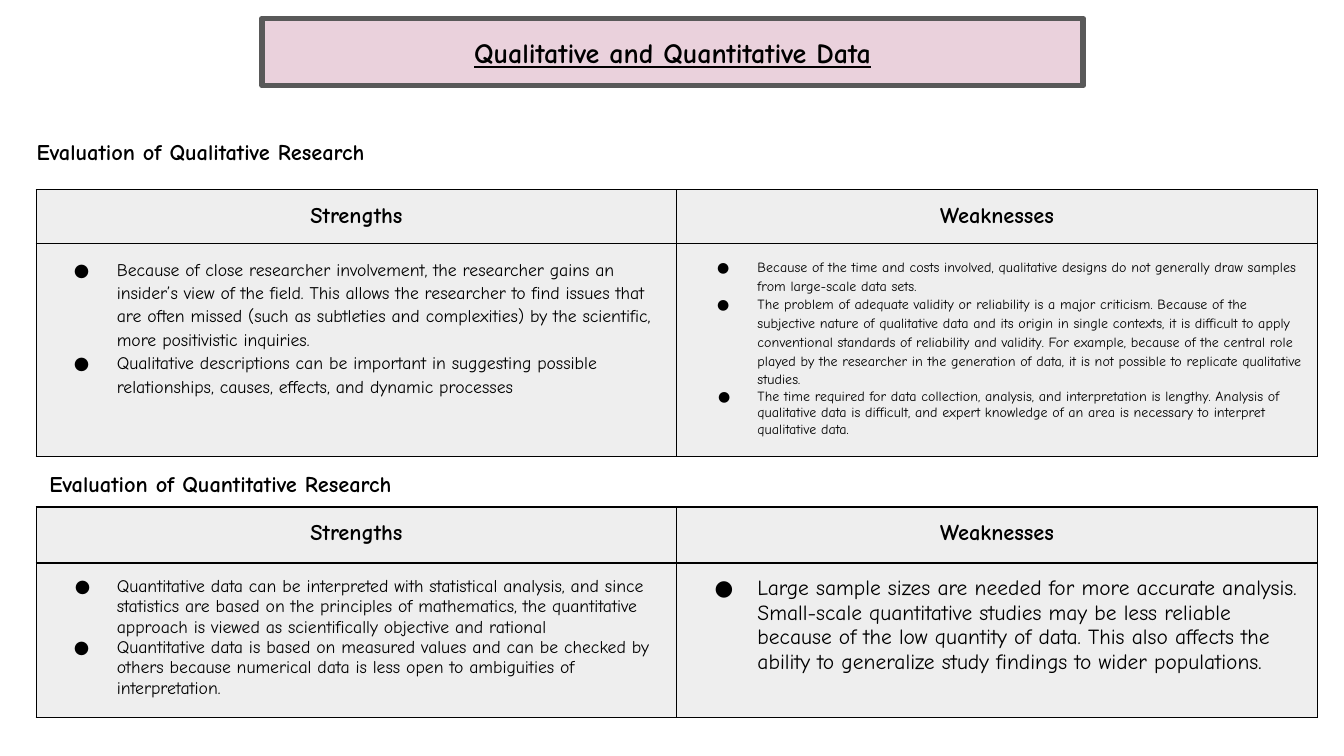
from pptx import Presentation
from pptx.util import Pt
from pptx.dml.color import RGBColor
from pptx.enum.shapes import MSO_SHAPE
from pptx.enum.text import MSO_ANCHOR, PP_ALIGN
from lxml import etree
from pptx.oxml.ns import qn

FONT = "Comic Neue"
INSET = 7.2
COLUMN = 343.2
TABLE_LEFT = 19.4


def color(value):
    return RGBColor.from_string(value)


def write(frame, text, size=12, bold=True, underline=False, align=PP_ALIGN.LEFT,
          spacing=None, hanging=None):
    """Append one paragraph; hanging gives the bullet's distance from the text."""
    frame.word_wrap = True
    first = frame.paragraphs[0]
    paragraph = frame.add_paragraph() if first.runs else first
    paragraph.alignment = align
    if spacing:
        paragraph.line_spacing = spacing
    if hanging:
        props = paragraph._p.get_or_add_pPr()
        props.set("marL", str(Pt(36)))
        props.set("indent", str(-Pt(hanging)))
        bullet_color = etree.SubElement(props, qn("a:buClr"))
        etree.SubElement(bullet_color, qn("a:srgbClr"), val="000000")
        etree.SubElement(props, qn("a:buFont"), typeface=FONT)
        etree.SubElement(props, qn("a:buChar"), char="●")
    run = paragraph.add_run()
    run.text = text
    run.font.name = FONT
    run.font.size = Pt(size)
    run.font.bold = bold
    run.font.underline = underline
    run.font.color.rgb = color("000000")


def style_cell(cell):
    """Thin black borders, grey fill and even insets."""
    props = cell._tc.get_or_add_tcPr()
    for side in ("lnL", "lnR", "lnT", "lnB"):
        border = etree.SubElement(props, qn(f"a:{side}"), w=str(Pt(0.75)))
        fill = etree.SubElement(border, qn("a:solidFill"))
        etree.SubElement(fill, qn("a:srgbClr"), val="000000")
    cell.fill.solid()
    cell.fill.fore_color.rgb = color("EEEEEE")
    cell.margin_left = cell.margin_right = Pt(INSET)
    cell.margin_top = cell.margin_bottom = Pt(INSET)


deck = Presentation()
deck.slide_width, deck.slide_height = Pt(720), Pt(405)
slide = deck.slides.add_slide(deck.slide_layouts[6])

# Title banner
banner = slide.shapes.add_shape(MSO_SHAPE.RECTANGLE, Pt(140.4), Pt(9.9), Pt(440), Pt(36))
banner.shadow.inherit = False
banner.fill.solid()
banner.fill.fore_color.rgb = color("EAD1DC")
banner.line.color.rgb = color("595959")
banner.line.width = Pt(3)
banner.text_frame.vertical_anchor = MSO_ANCHOR.MIDDLE
write(banner.text_frame, "Qualitative and Quantitative Data", size=15, underline=True,
      align=PP_ALIGN.CENTER)

# Each bullet: text, size, hanging indent, line spacing
qualitative_strengths = [
    ("Because of close researcher involvement, the researcher gains an insider’s view of "
     "the field. This allows the researcher to find issues that are often missed (such as "
     "subtleties and complexities) by the scientific, more positivistic inquiries.",
     9.5, 23, 1.15),
    ("Qualitative descriptions can be important in suggesting possible relationships, "
     "causes, effects, and dynamic processes", 9.5, 23, 1.15),
]
qualitative_weaknesses = [
    ("Because of the time and costs involved, qualitative designs do not generally draw "
     "samples from large-scale data sets.", 7.5, 21.6, 1.15),
    ("The problem of adequate validity or reliability is a major criticism. Because of the "
     "subjective nature of qualitative data and its origin in single contexts, it is "
     "difficult to apply conventional standards of reliability and validity. For example, "
     "because of the central role played by the researcher in the generation of data, it is "
     "not possible to replicate qualitative studies.", 7.5, 21.6, 1.15),
    ("The time required for data collection, analysis, and interpretation is lengthy. "
     "Analysis of qualitative data is difficult, and expert knowledge of an area is "
     "necessary to interpret qualitative data.", 7.5, 21, None),
]
quantitative_strengths = [
    ("Quantitative data can be interpreted with statistical analysis, and since statistics "
     "are based on the principles of mathematics, the quantitative approach is viewed as "
     "scientifically objective and rational", 9.5, 22.5, None),
    ("Quantitative data is based on measured values and can be checked by others because "
     "numerical data is less open to ambiguities of interpretation.", 9.5, 23, None),
]
quantitative_weaknesses = [
    ("Large sample sizes are needed for more accurate analysis. Small-scale quantitative "
     "studies may be less reliable because of the low quantity of data. This also affects "
     "the ability to generalize study findings to wider populations.", 11.5, 23, None),
]

# Each evaluation: heading, heading box, table top, row heights, bullets by column
evaluations = [
    ("Evaluation of Qualitative Research", (12.5, 67, 291.6, 26), 101.7, (27.9, 111.4),
     (qualitative_strengths, qualitative_weaknesses)),
    ("Evaluation of Quantitative Research", (19.4, 244.8, 259.2, 26), 271.6, (30, 79.8),
     (quantitative_strengths, quantitative_weaknesses)),
]

for heading, box, top, heights, columns in evaluations:
    # Heading
    heading_frame = slide.shapes.add_textbox(*map(Pt, box)).text_frame
    heading_frame.margin_left = heading_frame.margin_right = Pt(INSET)
    heading_frame.margin_top = heading_frame.margin_bottom = Pt(INSET)
    write(heading_frame, heading)

    # Strengths and weaknesses
    table = slide.shapes.add_table(2, 2, Pt(TABLE_LEFT), Pt(top), Pt(2 * COLUMN),
                                   Pt(sum(heights))).table
    for row, height in zip(table.rows, heights):
        row.height = Pt(height)
    for cell in table.iter_cells():
        style_cell(cell)
    for index, (label, bullets) in enumerate(zip(("Strengths", "Weaknesses"), columns)):
        table.columns[index].width = Pt(COLUMN)
        write(table.cell(0, index).text_frame, label, align=PP_ALIGN.CENTER)
        for text, size, hanging, spacing in bullets:
            write(table.cell(1, index).text_frame, text, size=size, bold=False,
                  hanging=hanging, spacing=spacing)

deck.save("out.pptx")
